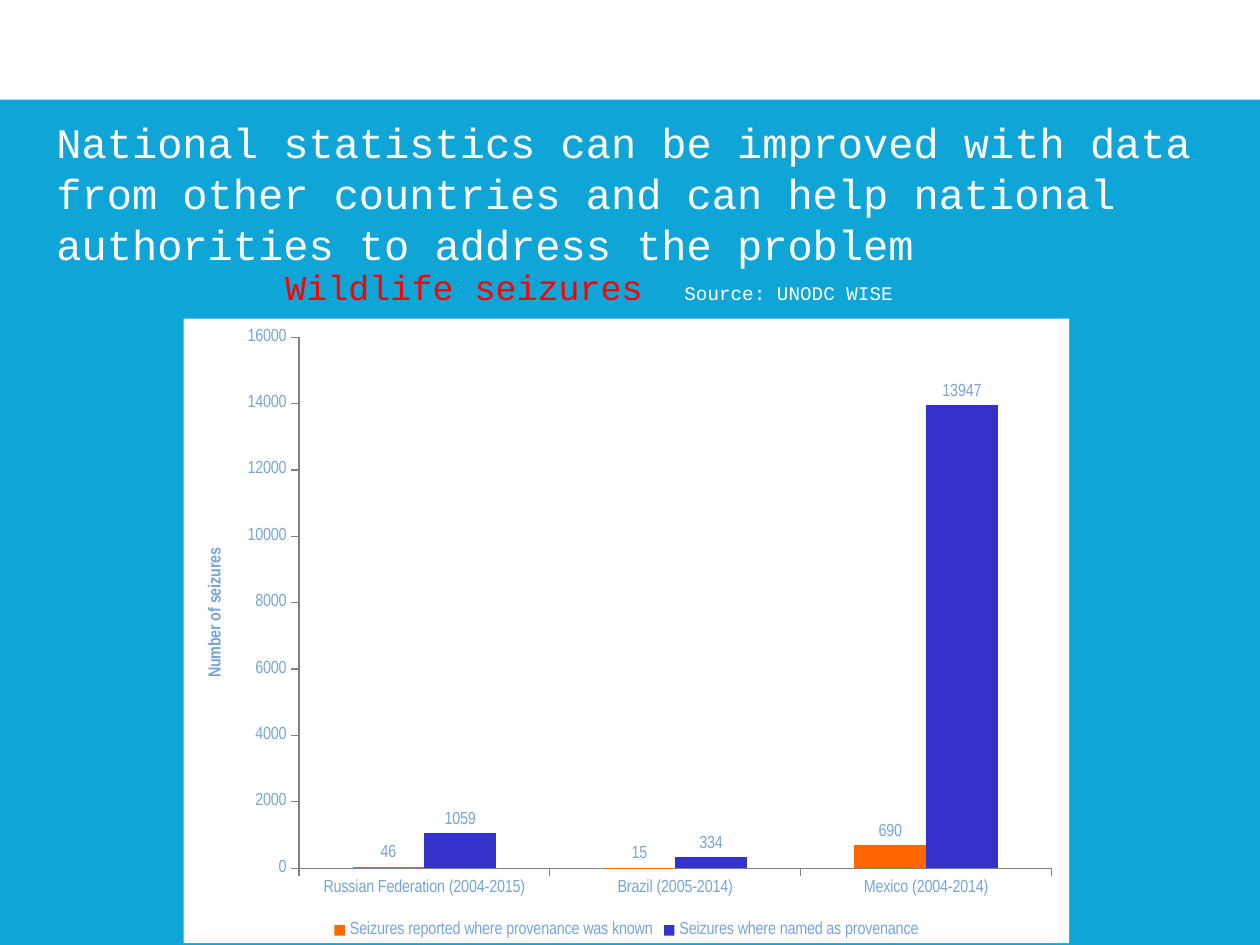
from dataclasses import dataclass

from lxml.etree import SubElement
from pptx import Presentation
from pptx.chart.data import CategoryChartData
from pptx.dml.color import RGBColor
from pptx.enum.chart import XL_CHART_TYPE as ChartType
from pptx.enum.chart import XL_LABEL_POSITION as LabelPosition
from pptx.enum.chart import XL_LEGEND_POSITION as LegendPosition
from pptx.enum.chart import XL_TICK_MARK as TickMark
from pptx.enum.shapes import MSO_SHAPE as ShapeKind
from pptx.oxml import parse_xml
from pptx.oxml.ns import nsdecls, qn
from pptx.util import Pt

HEADING_FONT = "Courier New"
CHART_FONT = "Arial Narrow"
WHITE = "FFFFFF"
CHART_TEXT = "77A5D5"
AXIS_GREY = "808080"


@dataclass
class Box:
    left: float
    top: float
    width: float
    height: float

    def lengths(self) -> list:
        return [Pt(value) for value in (self.left, self.top, self.width, self.height)]


@dataclass
class Run:
    text: str
    size: float
    color: str


@dataclass
class Series:
    name: str
    values: tuple
    color: str


CATEGORIES = ("Russian Federation (2004-2015)", "Brazil (2005-2014)", "Mexico (2004-2014)")
SERIES = (
    Series("Seizures reported where provenance was known", (46, 15, 690), "FF6600"),
    Series("Seizures where named as provenance", (1059, 334, 13947), "3333CC"),
)


def paint(color_format, color: str) -> None:
    color_format.rgb = RGBColor.from_string(color)


def fill_solid(fill, color: str) -> None:
    fill.solid()
    paint(fill.fore_color, color)


def style_font(font, *, size: float, color: str, name: str, bold: bool = False) -> None:
    font.size, font.name, font.bold = Pt(size), name, bold
    paint(font.color, color)


def add_text(slide, box: Box, runs: list[Run], *, font: str, line: float, tab: float = 0) -> None:
    frame = slide.shapes.add_textbox(*box.lengths()).text_frame
    frame.word_wrap = True
    frame.margin_top, frame.margin_bottom = Pt(6), Pt(0)
    paragraph = frame.paragraphs[0]
    paragraph.line_spacing = Pt(line)
    if tab:
        tabs = SubElement(paragraph._p.get_or_add_pPr(), qn("a:tabLst"))
        SubElement(tabs, qn("a:tab"), pos=str(Pt(tab)), algn="l")
    for item in runs:
        run = paragraph.add_run()
        run.text = item.text
        style_font(run.font, size=item.size, color=item.color, name=font)


def add_band(slide, box: Box, color: str) -> None:
    shape = slide.shapes.add_shape(ShapeKind.RECTANGLE, *box.lengths())
    shape.shadow.inherit = False
    fill_solid(shape.fill, color)
    shape.line.fill.background()


def white_area():
    return parse_xml(
        f'<c:spPr {nsdecls("c", "a")}><a:solidFill><a:srgbClr val="{WHITE}"/></a:solidFill>'
        "<a:ln><a:noFill/></a:ln></c:spPr>"
    )


def set_areas(chart) -> None:
    space = chart._chartSpace
    plot_area = space.chart.plotArea
    space.chart.addnext(white_area())
    plot_area.append(white_area())
    for old in plot_area.findall(qn("c:layout")):
        plot_area.remove(old)
    layout = parse_xml(f'<c:layout {nsdecls("c")}><c:manualLayout/></c:layout>')
    settings = {"layoutTarget": "inner", "xMode": "edge", "yMode": "edge",
                "x": "0.13", "y": "0.03", "w": "0.85", "h": "0.85"}
    for tag, value in settings.items():
        SubElement(layout[0], qn(f"c:{tag}"), val=value)
    plot_area.insert(0, layout)


def style_axis(axis) -> None:
    axis.has_major_gridlines = False
    axis.major_tick_mark = TickMark.OUTSIDE
    axis.minor_tick_mark = TickMark.NONE
    paint(axis.format.line.color, AXIS_GREY)
    axis.format.line.width = Pt(0.75)


def add_column_chart(slide, box: Box, categories: tuple, series_list: tuple) -> None:
    data = CategoryChartData()
    data.categories = categories
    for item in series_list:
        data.add_series(item.name, item.values)
    chart = slide.shapes.add_chart(ChartType.COLUMN_CLUSTERED, *box.lengths(), data).chart
    style_font(chart.font, size=10, color=CHART_TEXT, name=CHART_FONT)
    chart.has_title = False
    chart.has_legend = True
    chart.legend.position = LegendPosition.BOTTOM
    chart.legend.include_in_layout = False

    plot = chart.plots[0]
    plot.gap_width, plot.overlap = 150, 0
    plot.vary_by_categories = False
    for series, item in zip(plot.series, series_list):
        fill_solid(series.format.fill, item.color)
        labels = series.data_labels
        labels.show_value = True
        labels.position = LabelPosition.OUTSIDE_END
        style_font(labels.font, size=10, color=CHART_TEXT, name=CHART_FONT)

    style_axis(chart.category_axis)
    value_axis = chart.value_axis
    style_axis(value_axis)
    value_axis.minimum_scale, value_axis.maximum_scale = 0, 16000
    value_axis.major_unit = 2000
    paragraph = value_axis.axis_title.text_frame.paragraphs[0]
    run = paragraph.add_run()
    run.text = "Number of seizures"
    style_font(run.font, size=10, color=CHART_TEXT, name=CHART_FONT, bold=True)
    set_areas(chart)


def main() -> None:
    presentation = Presentation()
    presentation.slide_width, presentation.slide_height = Pt(720), Pt(540)
    slide = presentation.slides.add_slide(presentation.slide_layouts[6])
    fill_solid(slide.background.fill, "0FA6D7")
    add_band(slide, Box(0, 0, 720, 57), WHITE)
    title = ("National statistics can be improved with data from other countries "
             "and can help national authorities to address the problem")
    add_text(slide, Box(25.2, 60.5, 686.2, 94.3), [Run(title, 24, WHITE)],
             font=HEADING_FONT, line=29)
    add_column_chart(slide, Box(105, 182, 506, 357), CATEGORIES, SERIES)
    add_text(slide, Box(156, 145.5, 459.4, 31.7),
             [Run("Wildlife seizures", 20, "FF0000"), Run("\tSource: UNODC WISE", 11, WHITE)],
             font=HEADING_FONT, line=24, tab=228)
    presentation.save("out.pptx")


if __name__ == "__main__":
    main()
